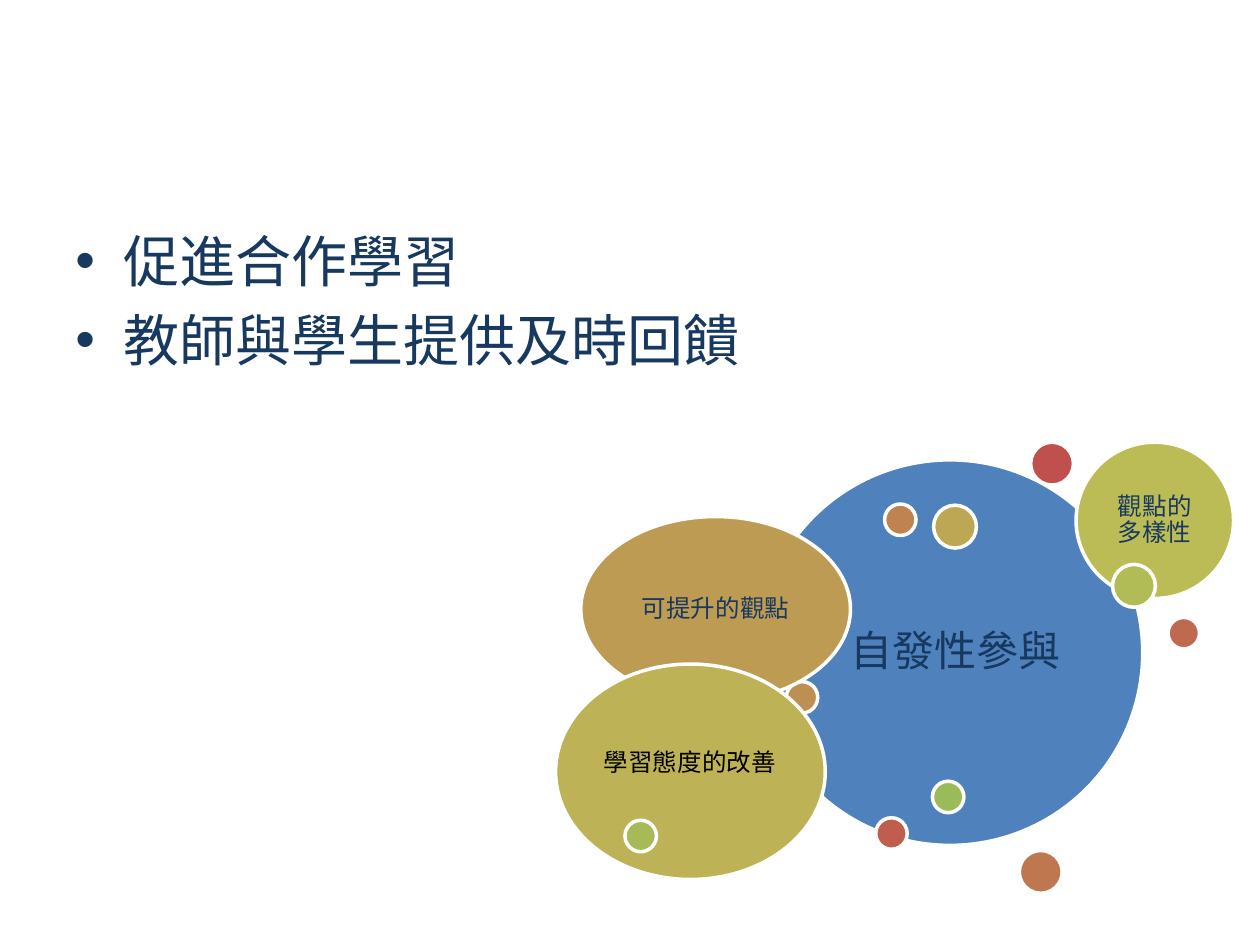
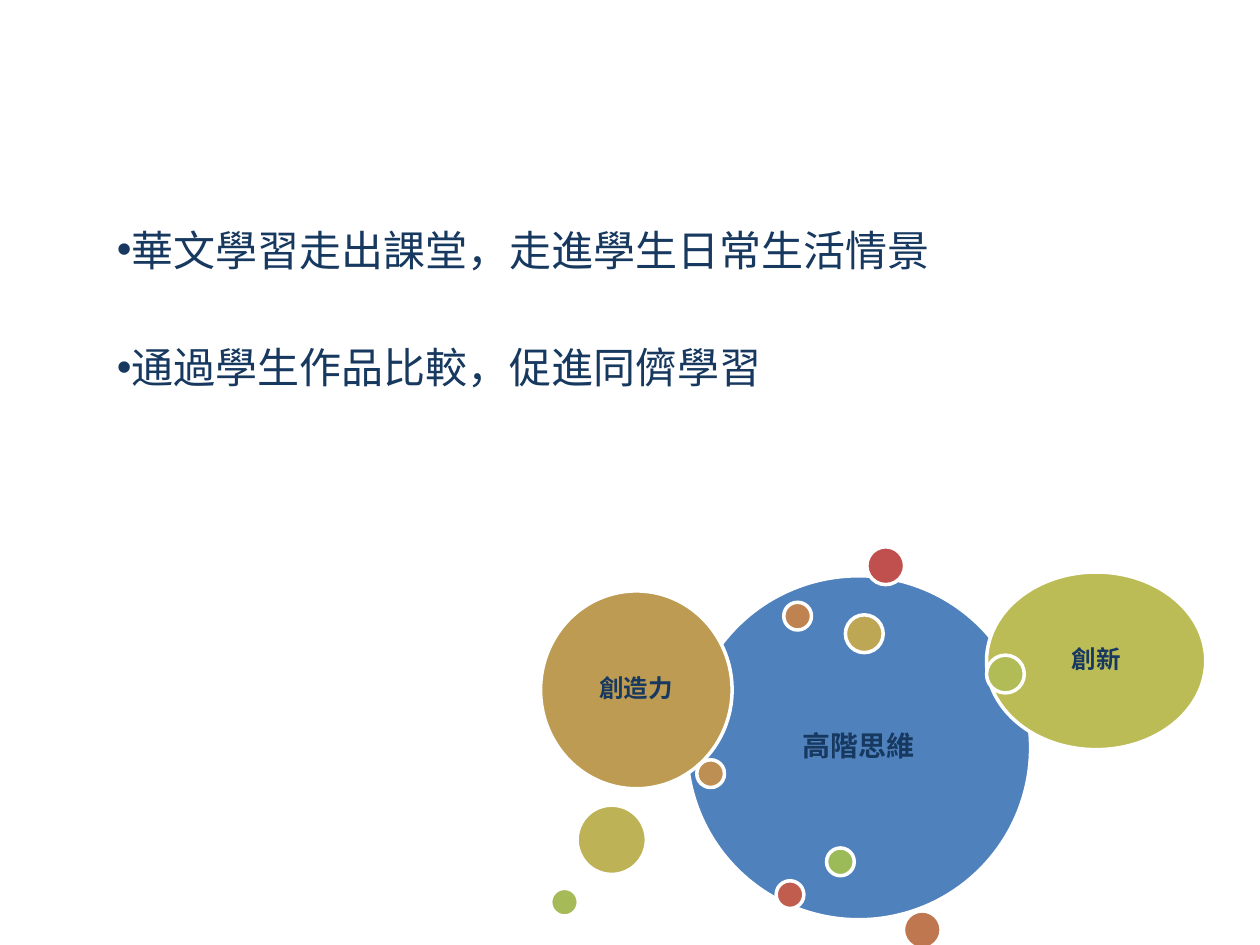
from dataclasses import dataclass

from lxml.etree import SubElement
from pptx import Presentation
from pptx.dml.color import RGBColor
from pptx.enum.shapes import MSO_SHAPE as Shape
from pptx.enum.text import MSO_ANCHOR as Anchor, PP_ALIGN as Align
from pptx.oxml.ns import qn
from pptx.util import Inches, Pt

# Shared look
NAVY = "17385F"
WHITE = "FFFFFF"
BLACK = "000000"
FONT = "Calibri"
# One fill per bubble, from back to front; every slide uses the same order
BUBBLE_FILLS = [
    "4F81BD", "C0504D", "C05D4E", "BF6A4F", "BF7750", "BE8351", "BE8F52",
    "BD9B53", "BDA654", "BDB255", "BCBC56", "B1BC57", "A6BB58", "9BBB59",
]


@dataclass(frozen=True)
class Bubble:
    left: float
    top: float
    width: float
    height: float
    label: str = ""
    size: int = 14
    bold: bool = False
    inset: float = 0.06
    shift: float = 0  # extra left inset


@dataclass(frozen=True)
class BulletList:
    left: float
    top: float
    width: float
    height: float
    lines: tuple[str, ...]
    size: int
    gap: float
    indent: float = 0


def dot(left: float, top: float, diameter: float) -> Bubble:
    return Bubble(left, top, diameter, diameter)


def color(value: str) -> RGBColor:
    return RGBColor.from_string(value)


def add_bullet(paragraph, indent: float) -> None:
    props = paragraph._p.get_or_add_pPr()
    props.set("marL", str(Inches(indent)))
    props.set("indent", str(Inches(-indent)))
    SubElement(props, qn("a:buFont"), typeface="Arial")
    SubElement(props, qn("a:buChar"), char="•")


def write(frame, *lines: str, size: float, font: str = FONT, fill: str = NAVY,
          bold: bool = False, align=Align.LEFT, anchor=Anchor.TOP,
          line_spacing: float = 1, gap: float = 0,
          bullet_indent: float | None = None) -> None:
    frame.word_wrap = True
    frame.vertical_anchor = anchor
    for index, line in enumerate(lines):
        paragraph = frame.add_paragraph() if index else frame.paragraphs[0]
        paragraph.alignment = align
        paragraph.line_spacing = line_spacing
        if index:
            paragraph.space_before = Pt(gap)
        if bullet_indent is not None:
            add_bullet(paragraph, bullet_indent)
        run = paragraph.add_run()
        run.text = line
        run.font.size = Pt(size)
        run.font.name = font
        run.font.bold = bold
        run.font.color.rgb = color(fill)


def add_text(slide, left: float, top: float, width: float, height: float,
             *lines: str, **style) -> None:
    box = slide.shapes.add_textbox(
        Inches(left), Inches(top), Inches(width), Inches(height))
    write(box.text_frame, *lines, **style)


def draw_bubble(slide, bubble: Bubble, fill: str) -> None:
    ellipse = slide.shapes.add_shape(
        Shape.OVAL, Inches(bubble.left), Inches(bubble.top),
        Inches(bubble.width), Inches(bubble.height))
    ellipse.shadow.inherit = False
    ellipse.fill.solid()
    ellipse.fill.fore_color.rgb = color(fill)
    ellipse.line.color.rgb = color(WHITE)
    ellipse.line.width = Pt(2)
    if bubble.label:
        frame = ellipse.text_frame
        frame.margin_top = frame.margin_bottom = Inches(bubble.inset)
        frame.margin_right = Inches(bubble.inset)
        frame.margin_left = Inches(bubble.inset + bubble.shift)
        write(frame, bubble.label, size=bubble.size, bold=bubble.bold,
              align=Align.CENTER, anchor=Anchor.MIDDLE, line_spacing=0.9)


def add_slide(deck, points: BulletList, bubbles: list[Bubble]):
    slide = deck.slides.add_slide(deck.slide_layouts[6])
    add_text(slide, points.left, points.top, points.width, points.height,
             *points.lines, size=points.size, gap=points.gap,
             bullet_indent=points.indent)
    for bubble, fill in zip(bubbles, BUBBLE_FILLS):
        draw_bubble(slide, bubble, fill)
    return slide


# Slide 1: collaboration and participation
COLLABORATION = BulletList(
    0.5, 1.75, 9, 4.95, ("促進合作學習", "教師與學生提供及時回饋"),
    size=32, gap=6.4, indent=0.38)
PARTICIPATION_BUBBLES = [
    Bubble(6.01, 3.65, 3.06, 3.06, "自發性參與", size=24, inset=0.1, shift=0.08),
    dot(8.18, 3.51, 0.34),
    dot(6.95, 6.49, 0.25),
    dot(9.27, 4.9, 0.25),
    dot(8.09, 6.75, 0.34),
    dot(7.02, 4, 0.25),
    dot(6.24, 5.41, 0.25),
    Bubble(4.61, 4.1, 2.14, 1.47, "可提升的觀點"),
    dot(7.41, 4.01, 0.34),
    Bubble(4.41, 5.27, 2.14, 1.71),
    Bubble(8.54, 3.51, 1.25, 1.24, "觀點的多樣性"),
    dot(8.83, 4.48, 0.34),
    dot(4.96, 6.51, 0.25),
    dot(7.4, 6.2, 0.25),
]

# Slide 2: learning in daily life and higher-order thinking
DAILY_LIFE = BulletList(
    0.83, 1.73, 8.5, 5.41,
    ("華文學習走出課堂，走進學生日常生活情景", "通過學生作品比較，促進同儕學習"),
    size=24, gap=38.2)
THINKING_BUBBLES = [
    Bubble(5.45, 4.57, 2.73, 2.73, "高階思維", size=16, bold=True, inset=0.07),
    dot(6.88, 4.34, 0.3),
    dot(6.16, 6.99, 0.22),
    dot(8.22, 5.57, 0.22),
    dot(7.17, 7.23, 0.3),
    dot(6.22, 4.78, 0.22),
    dot(5.53, 6.03, 0.22),
    Bubble(4.29, 4.69, 1.52, 1.57, "創造力", bold=True),
    dot(6.71, 4.88, 0.3),
    dot(4.58, 6.39, 0.55),
    Bubble(7.83, 4.54, 1.74, 1.41, "創新", bold=True),
    dot(7.83, 5.2, 0.3),
    dot(4.37, 7.05, 0.22),
    dot(6.56, 6.73, 0.22),
]


def main() -> None:
    deck = Presentation()
    deck.slide_width = Inches(10)
    deck.slide_height = Inches(7.5)

    participation = add_slide(deck, COLLABORATION, PARTICIPATION_BUBBLES)
    # This label sits slightly above the middle of its bubble
    add_text(participation, 4.69, 5.88, 1.57, 0.34, "學習態度的改善",
             size=14, font="Arial", fill=BLACK, align=Align.CENTER)

    add_slide(deck, DAILY_LIFE, THINKING_BUBBLES)
    deck.save("out.pptx")


if __name__ == "__main__":
    main()
